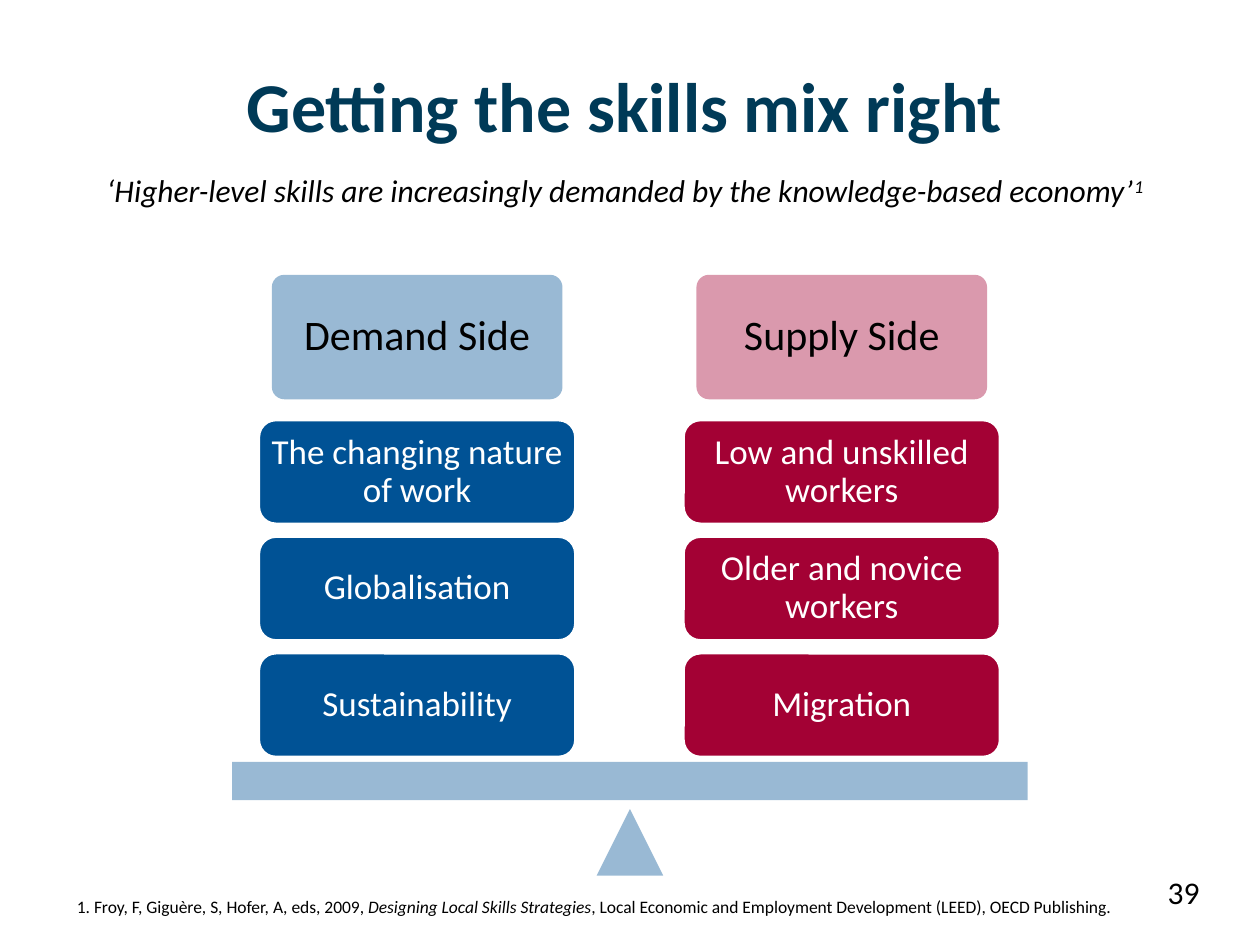
import pptx
import pptx.util
import pptx.dml.color
import pptx.enum.shapes
import pptx.enum.text
import pptx.oxml.ns
from lxml import etree

Cm = pptx.util.Cm
Pt = pptx.util.Pt
RGBColor = pptx.dml.color.RGBColor
Shape = pptx.enum.shapes.MSO_SHAPE
Align = pptx.enum.text.PP_ALIGN
Anchor = pptx.enum.text.MSO_ANCHOR

NAVY = RGBColor(0x00, 0x3A, 0x57)
BLUE = RGBColor(0x00, 0x52, 0x95)
RED = RGBColor(0xA3, 0x01, 0x34)
BLACK = RGBColor(0x00, 0x00, 0x00)
WHITE = RGBColor(0xFF, 0xFF, 0xFF)

TITLE_ONLY = 5
HEADER_TOP, HEADER_WIDTH, HEADER_HEIGHT = 5.54, 5.86, 2.51
BLOCK_TOP, BLOCK_WIDTH, BLOCK_HEIGHT, BLOCK_STEP = 8.46, 6.4, 2.11, 2.35
# heading, colour, centre of the stack, blocks from top to bottom
SIDES = [
    ("Demand Side", BLUE, 8.41,
     ["The changing nature of work", "Globalisation", "Sustainability"]),
    ("Supply Side", RED, 16.97,
     ["Low and unskilled workers", "Older and novice workers", "Migration"]),
]


class SlideBuilder:
    def __init__(self, deck, font="Calibri"):
        self.font = font
        self.page = deck.slides.add_slide(deck.slide_layouts[TITLE_ONLY])

    def style(self, para, size, color, bold=None, italic=None):
        para.font.name = self.font
        para.font.size = Pt(size)
        para.font.color.rgb = color
        para.font.bold = bold
        para.font.italic = italic

    def title(self, text, left, top, width, height):
        box = self.page.shapes.title
        box.left, box.top, box.width, box.height = map(Cm, (left, top, width, height))
        frame = box.text_frame
        frame.text = text
        frame.word_wrap = False
        frame.auto_size = pptx.enum.text.MSO_AUTO_SIZE.NONE
        frame.vertical_anchor = Anchor.MIDDLE
        para = frame.paragraphs[0]
        para.alignment = Align.CENTER
        self.style(para, 40, NAVY, bold=True)

    def text(self, spans, left, top, width, height, size, italic=None):
        """Add a one-paragraph text box and return its runs."""
        box = self.page.shapes.add_textbox(*map(Cm, (left, top, width, height)))
        box.text_frame.word_wrap = True
        para = box.text_frame.paragraphs[0]
        for words in spans:
            para.add_run().text = words
        self.style(para, size, BLACK, italic=italic)
        return para.runs

    def shape(self, kind, left, top, width, height, color, opacity=100):
        box = self.page.shapes.add_shape(kind, *map(Cm, (left, top, width, height)))
        box.shadow.inherit = False
        box.fill.solid()
        box.fill.fore_color.rgb = color
        box.line.fill.background()
        if opacity < 100:
            qn = pptx.oxml.ns.qn
            fill_color = box.fill._xPr.find(qn("a:solidFill")).find(qn("a:srgbClr"))
            etree.SubElement(fill_color, qn("a:alpha")).set("val", str(opacity * 1000))
        return box

    def label(self, box, text, size, color, inset):
        frame = box.text_frame
        frame.text = text
        frame.word_wrap = True
        frame.vertical_anchor = Anchor.MIDDLE
        frame.margin_left = frame.margin_right = Cm(inset)
        frame.margin_top = frame.margin_bottom = Cm(inset)
        para = frame.paragraphs[0]
        para.alignment = Align.CENTER
        para.line_spacing = 0.9
        self.style(para, size, color)

    def header(self, text, center, color):
        box = self.shape(Shape.ROUNDED_RECTANGLE, center - HEADER_WIDTH / 2, HEADER_TOP,
                         HEADER_WIDTH, HEADER_HEIGHT, color, opacity=40)
        box.adjustments[0] = 0.1
        self.label(box, text, 24, BLACK, 0.25)

    def block(self, text, center, top, color):
        box = self.shape(Shape.ROUNDED_RECTANGLE, center - BLOCK_WIDTH / 2, top,
                         BLOCK_WIDTH, BLOCK_HEIGHT, color)
        box.line.color.rgb = WHITE
        box.line.width = Pt(2)
        self.label(box, text, 20, WHITE, 0)


def main():
    deck = pptx.Presentation()
    deck.slide_width, deck.slide_height = Cm(25.4), Cm(19.05)
    slide = SlideBuilder(deck)

    slide.title("Getting the skills mix right", 4.6, 1.12, 15.98, 1.96)
    quote = slide.text(
        ["‘Higher-level skills are increasingly demanded by the knowledge-based economy’", "1"],
        1.9, 3.33, 21.6, 1.02, 18, italic=True)
    quote[1]._r.get_or_add_rPr().set("baseline", "30000")

    slide.shape(Shape.ISOSCELES_TRIANGLE, 12.03, 16.31, 1.34, 1.34, BLUE, opacity=40)
    slide.shape(Shape.RECTANGLE, 4.68, 15.36, 16.04, 0.77, BLUE, opacity=40)
    for heading, color, center, blocks in SIDES:
        slide.header(heading, center, color)
        for row, words in enumerate(blocks):
            slide.block(words, center, BLOCK_TOP + row * BLOCK_STEP, color)

    source = slide.text(
        ["1. Froy, F, Giguère, S, Hofer, A, eds, 2009, ",
         "Designing Local Skills Strategies",
         ", Local Economic and Employment Development (LEED), OECD Publishing."],
        1.3, 17.93, 21.8, 0.69, 10)
    source[1].font.italic = True
    slide.text(["39"], 23.29, 17.48, 2.11, 1.57, 18)

    deck.save("out.pptx")


if __name__ == "__main__":
    main()
